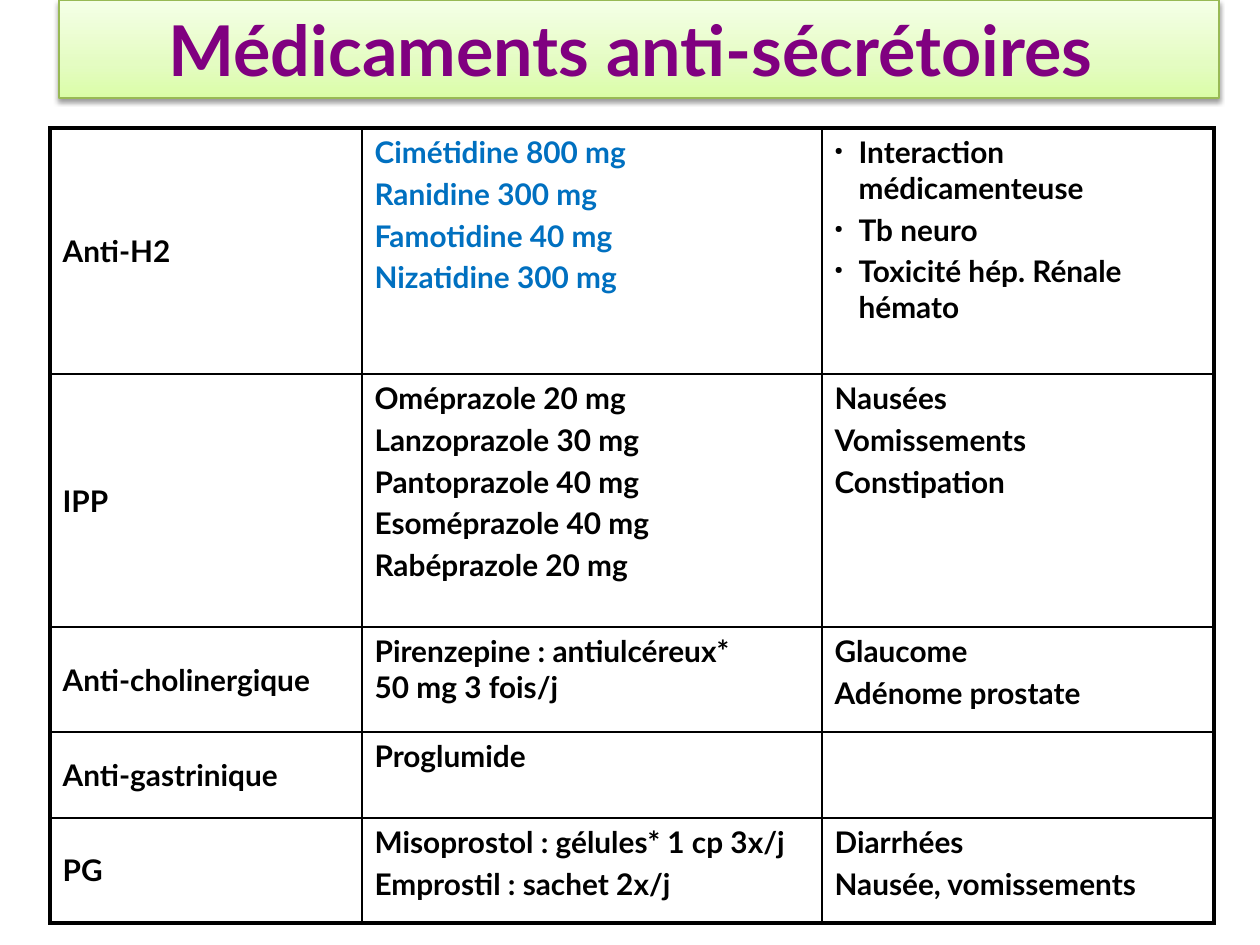
"""Build a slide with a table of antisecretory drugs."""
from lxml import etree
from pptx import Presentation
from pptx.dml.color import RGBColor
from pptx.enum.text import MSO_ANCHOR, PP_ALIGN
from pptx.oxml import parse_xml
from pptx.oxml.ns import nsdecls, qn
from pptx.util import Emu, Pt

MIDDLE, TOP = MSO_ANCHOR.MIDDLE, MSO_ANCHOR.TOP
CENTER = PP_ALIGN.CENTER
PX_PER_INCH = 126
BULLET_INDENT = 24
COLORS = {
    "black": "000000", "white": "FFFFFF", "blue": "0070C0", "purple": "800080",
    "outline": "98B955", "lime": "DAFDA7", "pale": "E4FCC2", "mist": "F5FFE7",
}
TITLE_FONT = {"name": "Lato", "size": Pt(40), "bold": True}
CELL_FONT = {"name": "Lato", "size": Pt(17), "bold": True}
COLUMN_WIDTHS = [312, 460, 392]
ROW_HEIGHTS = [246, 253, 105, 86, 105]
DRUG_ROWS = [
    ("Anti-H2",
     ["Cimétidine 800 mg", "Ranidine 300 mg", "Famotidine 40 mg", "Nizatidine 300 mg"],
     ["Interaction médicamenteuse", "Tb neuro", "Toxicité hép. Rénale hémato"]),
    ("IPP",
     ["Oméprazole 20 mg", "Lanzoprazole 30 mg", "Pantoprazole 40 mg",
      "Esoméprazole 40 mg", "Rabéprazole 20 mg"],
     ["Nausées", "Vomissements", "Constipation"]),
    ("Anti-cholinergique",
     ["Pirenzepine : antiulcéreux* \v50 mg 3 fois/j"],
     ["Glaucome", "Adénome prostate"]),
    ("Anti-gastrinique", ["Proglumide"], []),
    ("PG",
     ["Misoprostol : gélules* 1 cp 3x/j", "Emprostil : sachet 2x/j"],
     ["Diarrhées", "Nausée, vomissements"]),
]


def px(value):
    """Turn pixels into EMU."""
    return Emu(round(value * 914400 / PX_PER_INCH))


class SlideBuilder:
    """Hold the style and the current slide."""

    def __init__(self, presentation):
        """Add a title-only slide."""
        self.slide = presentation.slides.add_slide(presentation.slide_layouts[5])

    def style_runs(self, paragraph, formats, color):
        """Format every run of a paragraph."""
        for run in paragraph.runs:
            for name, value in formats.items():
                setattr(run.font, name, value)
            run.font.color.rgb = RGBColor.from_string(COLORS[color])

    def title(self, text, left, top, width, height):
        """Place the title in a rounded gradient banner."""
        shape = self.slide.shapes.title
        box = {"left": left, "top": top, "width": width, "height": height}
        for name, value in box.items():
            setattr(shape, name, px(value))
        stops = "".join(
            f'<a:gs pos="{position}"><a:srgbClr val="{COLORS[color]}"/></a:gs>'
            for position, color in [(0, "lime"), (35000, "pale"), (100000, "mist")])
        banner = parse_xml(
            f'<p:spPr {nsdecls("p", "a")}>'
            '<a:prstGeom prst="roundRect"><a:avLst><a:gd name="adj" fmla="val 7800"/>'
            '</a:avLst></a:prstGeom>'
            f'<a:gradFill rotWithShape="1"><a:gsLst>{stops}</a:gsLst>'
            '<a:lin ang="16200000" scaled="0"/></a:gradFill>'
            f'<a:ln w="{Pt(0.75)}"><a:solidFill><a:srgbClr val="{COLORS["outline"]}"/>'
            '</a:solidFill></a:ln>'
            f'<a:effectLst><a:outerShdw blurRad="{Pt(3.1)}" dist="{Pt(1.6)}" '
            f'dir="5400000" rotWithShape="0"><a:srgbClr val="{COLORS["black"]}">'
            '<a:alpha val="38000"/></a:srgbClr></a:outerShdw></a:effectLst></p:spPr>')
        shape.element.spPr.extend(list(banner))
        frame = shape.text_frame
        frame.text = text
        frame.vertical_anchor = MIDDLE
        frame.paragraphs[0].alignment = CENTER
        self.style_runs(frame.paragraphs[0], TITLE_FONT, "purple")

    def borders(self, cell, widths):
        """Draw the four sides of a cell."""
        properties = cell._tc.get_or_add_tcPr()
        for side, width in zip("LRTB", widths):
            line = etree.SubElement(properties, qn(f"a:ln{side}"), w=str(Pt(width)))
            fill = etree.SubElement(line, qn("a:solidFill"))
            etree.SubElement(fill, qn("a:srgbClr"), val=COLORS["black"])

    def bullet(self, paragraph):
        """Give a paragraph a small hanging bullet."""
        properties = paragraph._p.get_or_add_pPr()
        indent = px(BULLET_INDENT)
        properties.set("marL", str(indent))
        properties.set("indent", str(-indent))
        color = etree.SubElement(properties, qn("a:buClr"))
        etree.SubElement(color, qn("a:srgbClr"), val=COLORS["black"])
        etree.SubElement(properties, qn("a:buSzPct"), val="35000")
        etree.SubElement(properties, qn("a:buChar"), char="●")

    def fill_cell(self, cell, lines, color, anchor, bulleted):
        """Write the lines of a cell on white."""
        cell.fill.solid()
        cell.fill.fore_color.rgb = RGBColor.from_string(COLORS["white"])
        cell.vertical_anchor = anchor
        frame = cell.text_frame
        for index, line in enumerate(lines):
            paragraph = frame.add_paragraph() if index else frame.paragraphs[0]
            paragraph.text = line
            if index:
                paragraph.space_before = Pt(3.4)
            if bulleted:
                self.bullet(paragraph)
            self.style_runs(paragraph, CELL_FONT, color)

    def table(self, rows, left, top, widths, heights):
        """Add a table with thick outer and thin inner borders."""
        last_row, last_column = len(heights) - 1, len(widths) - 1
        table = self.slide.shapes.add_table(
            len(heights), len(widths), px(left), px(top),
            px(sum(widths)), px(sum(heights))).table
        for flag in ("first_row", "horz_banding"):
            setattr(table, flag, False)
        for column, width in zip(table.columns, widths):
            column.width = px(width)
        for row_index, (family, drugs, effects) in enumerate(rows):
            table.rows[row_index].height = px(heights[row_index])
            for column_index, lines in enumerate(([family], drugs, effects)):
                cell = table.cell(row_index, column_index)
                outer = (column_index == 0, column_index == last_column,
                         row_index == 0, row_index == last_row)
                self.borders(cell, [2.25 if edge else 1 for edge in outer])
                first = row_index == 0
                self.fill_cell(
                    cell, lines,
                    "blue" if first and column_index == 1 else "black",
                    MIDDLE if column_index == 0 else TOP,
                    first and column_index == last_column)


def main():
    """Build and save the presentation."""
    presentation = Presentation()
    presentation.slide_width, presentation.slide_height = px(1260), px(945)
    builder = SlideBuilder(presentation)
    builder.title("Médicaments anti-sécrétoires ", 59, 0, 1160, 98)
    builder.table(DRUG_ROWS, 50, 128, COLUMN_WIDTHS, ROW_HEIGHTS)
    presentation.save("out.pptx")


if __name__ == "__main__":
    main()
